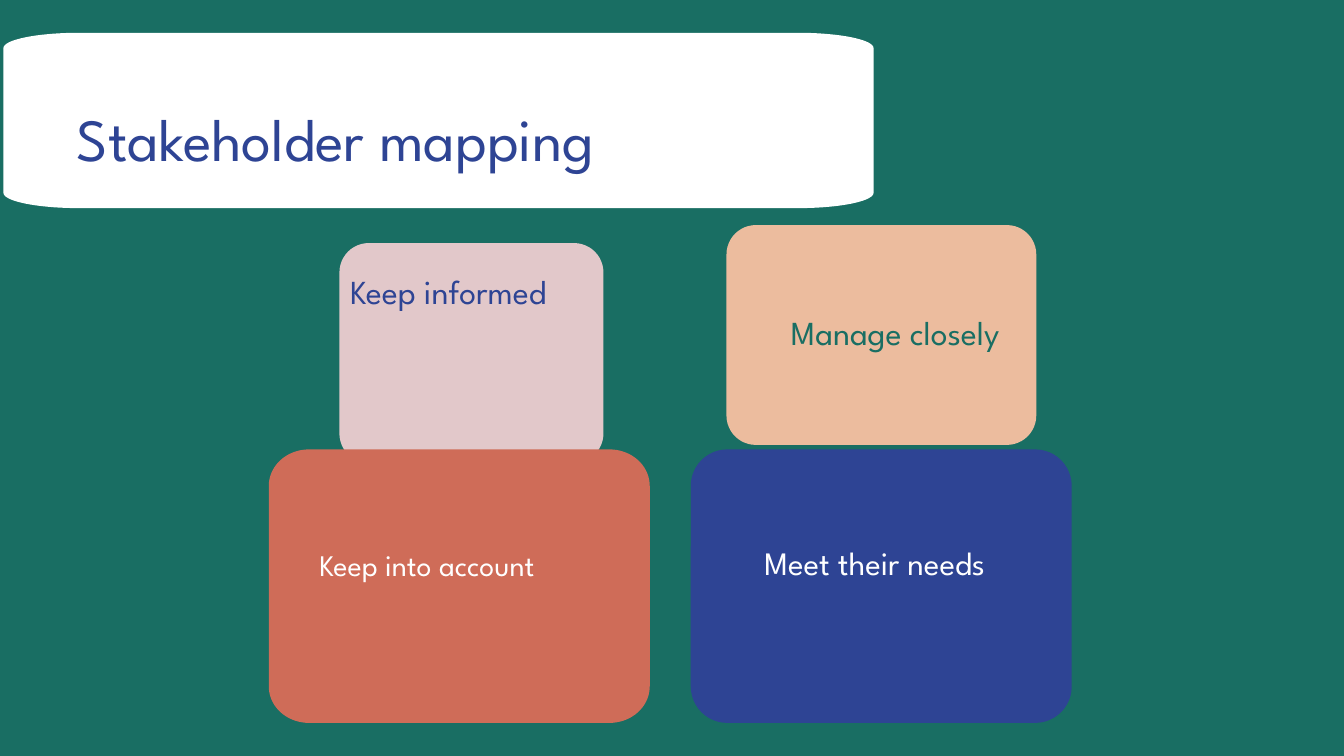
"""Build the stakeholder mapping slide."""
from math import cos, radians, sin
from typing import NamedTuple

from pptx import Presentation
from pptx.dml.color import RGBColor
from pptx.enum.shapes import MSO_SHAPE
from pptx.enum.text import MSO_ANCHOR, MSO_AUTO_SIZE, PP_ALIGN
from pptx.shapes.autoshape import Shape
from pptx.slide import Slide
from pptx.util import Cm, Pt

GREEN, BLUE, WHITE = "196E63", "2E4494", "FFFFFF"
FONT = "League Spartan"
LINE_RATIO = 1.3
FRAME_FORMAT = {
    "margin_left": 0,
    "margin_top": 0,
    "margin_right": 0,
    "margin_bottom": 0,
    "word_wrap": True,
    "auto_size": MSO_AUTO_SIZE.NONE,
    "vertical_anchor": MSO_ANCHOR.TOP,
}


class Area(NamedTuple):
    left: float
    top: float
    width: float
    height: float


class Panel(NamedTuple):
    area: Area
    color: str
    radius_x: float
    radius_y: float


class Label(NamedTuple):
    area: Area
    text: str
    size: float
    color: str
    align: PP_ALIGN = PP_ALIGN.CENTER


PANELS = [
    Panel(Area(26.11, 16.99, 14.4, 10.34), BLUE, 1.38, 1.38),
    Panel(Area(12.83, 9.19, 9.98, 8.31), "E2C8CA", 1.11, 1.11),
    Panel(Area(27.46, 8.51, 11.71, 8.31), "ECBC9E", 1.11, 1.11),
    Panel(Area(10.16, 16.99, 14.4, 10.34), "CF6C58", 1.52, 1.38),
    Panel(Area(0.13, 1.24, 32.89, 6.63), WHITE, 2.87, 0.58),
]
LABELS = [
    Label(Area(12.88, 10.11, 8.13, 3.35), "Keep informed", 36, BLUE),
    Label(Area(11.51, 20.55, 9.55, 3), "Keep into account ", 32, WHITE),
    Label(Area(28.14, 11.68, 11.71, 1.68), "Manage closely ", 36, GREEN),
    Label(Area(28.14, 20.4, 10.16, 3.28), "Meet their needs ", 35, WHITE),
]
TITLE = Label(Area(2.9, 3.61, 34.8, 2.95), "Stakeholder mapping", 64, BLUE, PP_ALIGN.LEFT)


def paint(fill, color: str) -> None:
    """Make a fill solid in a hex colour."""
    fill.solid()
    fill.fore_color.rgb = RGBColor.from_string(color)


def outline(panel: Panel) -> list[tuple[Cm, Cm]]:
    """Return the points of a box with elliptical corners."""
    left, top, width, height = panel.area
    near_x, far_x = left + panel.radius_x, left + width - panel.radius_x
    near_y, far_y = top + panel.radius_y, top + height - panel.radius_y
    centers = [(far_x, far_y), (near_x, far_y), (near_x, near_y), (far_x, near_y)]
    return [
        (Cm(x + panel.radius_x * cos(radians(angle))), Cm(y + panel.radius_y * sin(radians(angle))))
        for corner, (x, y) in enumerate(centers)
        for angle in range(corner * 90, corner * 90 + 91, 5)
    ]


def draw_panel(page: Slide, panel: Panel) -> None:
    """Draw a rounded panel without line or shadow."""
    if panel.radius_x == panel.radius_y:
        box = page.shapes.add_shape(MSO_SHAPE.ROUNDED_RECTANGLE, *map(Cm, panel.area))
        box.adjustments[0] = panel.radius_x / min(panel.area.width, panel.area.height)
    else:
        start, *points = outline(panel)
        builder = page.shapes.build_freeform(*start)
        builder.add_line_segments(points)
        box = builder.convert_to_shape()
    paint(box.fill, panel.color)
    box.line.fill.background()
    box.shadow.inherit = False


def write_label(box: Shape, label: Label) -> None:
    """Place a text shape and set its formatted text."""
    for name, value in zip(Area._fields, label.area):
        setattr(box, name, Cm(value))
    for name, value in FRAME_FORMAT.items():
        setattr(box.text_frame, name, value)
    para = box.text_frame.paragraphs[0]
    para.alignment = label.align
    para.line_spacing = Pt(label.size * LINE_RATIO)
    span = para.add_run()
    span.text = label.text
    for name, value in {"name": FONT, "size": Pt(label.size), "bold": False}.items():
        setattr(span.font, name, value)
    paint(span.font.fill, label.color)


def main() -> None:
    """Build and save the deck."""
    deck = Presentation()
    deck.slide_width, deck.slide_height = Cm(50.8), Cm(28.58)
    page = deck.slides.add_slide(deck.slide_layouts.get_by_name("Title Only"))
    paint(page.background.fill, GREEN)
    for panel in PANELS:
        draw_panel(page, panel)
    for label in LABELS:
        write_label(page.shapes.add_textbox(*map(Cm, label.area)), label)
    title = page.shapes.title
    write_label(title, TITLE)
    page.shapes.element.append(title.element)
    deck.save("out.pptx")


if __name__ == "__main__":
    main()
